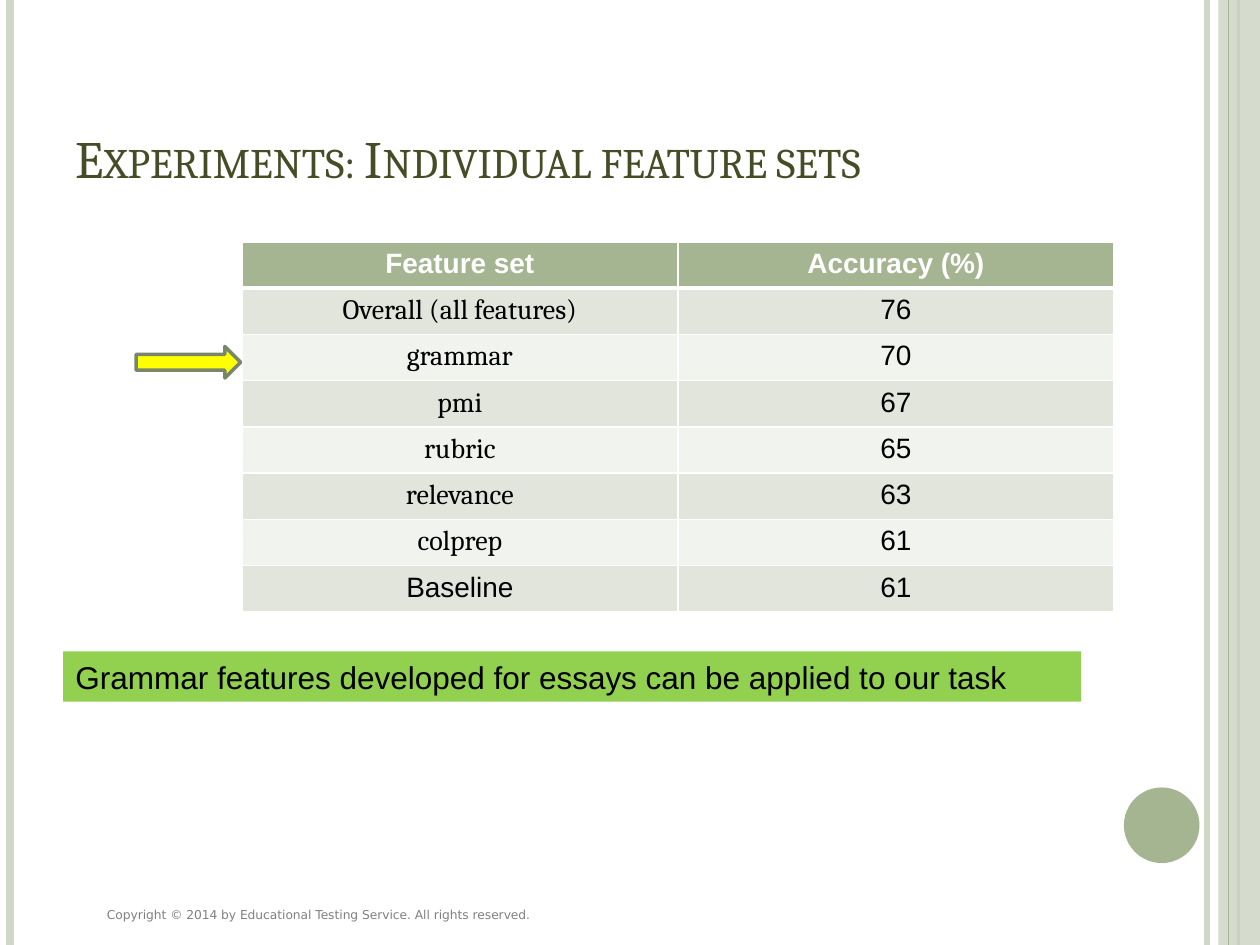
import pptx
import pptx.util
import pptx.dml.color
import pptx.enum.shapes
import pptx.enum.text
import pptx.oxml
import pptx.oxml.ns
from pptx.util import Inches

COLORS = {
    "sage": "A5B592", "pale": "CFD7C7", "title": "444D26", "gray": "808080",
    "band_dark": "E1E5DC", "band_light": "F0F3EE", "white": "FFFFFF",
    "black": "000000", "green": "92D050", "yellow": "FFFF00", "outline": "7A866C",
}
RGB = {k: pptx.dml.color.RGBColor.from_string(v) for k, v in COLORS.items()}
NS = pptx.oxml.ns.nsdecls("a")
SHAPE = pptx.enum.shapes.MSO_SHAPE
ALIGN = pptx.enum.text.PP_ALIGN
ANCHOR = pptx.enum.text.MSO_ANCHOR


def add_text(tf, text, size, font="Arial", color="black", bold=False,
             align=ALIGN.LEFT, anchor=ANCHOR.TOP, small_caps=False):
    tf.word_wrap = True
    tf.vertical_anchor = anchor
    p = tf.paragraphs[0]
    p.alignment = align
    r = p.add_run()
    r.text = text
    r.font.size = pptx.util.Pt(size)
    r.font.name = font
    r.font.bold = bold
    r.font.color.rgb = RGB[color]
    if small_caps:
        r.font._element.set("cap", "small")


def add_box(kind, x, y, w, h, fill, opacity=100):
    sp = s.shapes.add_shape(kind, Inches(x), Inches(y), Inches(w), Inches(h))
    sp.shadow.inherit = False
    sp.fill.solid()
    sp.fill.fore_color.rgb = RGB[fill]
    sp.line.fill.background()
    if opacity < 100:
        clr = sp._element.spPr.find(".//" + pptx.oxml.ns.qn("a:srgbClr"))
        clr.append(pptx.oxml.parse_xml(f'<a:alpha {NS} val="{opacity * 1000}"/>'))
    return sp


prs = pptx.Presentation()
prs.slide_width, prs.slide_height = Inches(10), Inches(7.5)
s = prs.slides.add_slide(prs.slide_layouts[6])

# Side band and vertical rules; the rule at 9.83 lies under the band
for x, color, width in [(9.58, "pale", 3), (0.08, "pale", 4.5),
                        (9.83, "sage", 1.5), (9.75, "sage", 0.75)]:
    if x == 9.75:
        add_box(SHAPE.RECTANGLE, 9.67, 0, 0.33, 7.5, "pale", opacity=87)
    rule = s.shapes.add_connector(pptx.enum.shapes.MSO_CONNECTOR.STRAIGHT,
                                  Inches(x), 0, Inches(x), Inches(7.5))
    rule.line.color.rgb = RGB[color]
    rule.line.width = pptx.util.Pt(width)
    rule._element.spPr.append(pptx.oxml.parse_xml(f"<a:effectLst {NS}/>"))

add_box(SHAPE.OVAL, 8.92, 6.25, 0.6, 0.6, "sage")

# Footer and title
footer = s.shapes.add_textbox(Inches(0.75), Inches(7.15), Inches(6.25), Inches(0.22))
add_text(footer.text_frame,
         "Copyright © 2014 by Educational Testing Service. All rights reserved.",
         7, font="DejaVu Sans", color="gray")
title = s.shapes.add_textbox(Inches(0.5), Inches(0.3), Inches(8.17), Inches(1.25))
add_text(title.text_frame, "Experiments: Individual feature sets", 30,
         font="Cambria", color="title", anchor=ANCHOR.BOTTOM, small_caps=True)

# Results table
rows = [
    ("Feature set", "Accuracy (%)"),
    ("Overall (all features)", "76"),
    ("grammar", "70"),
    ("pmi", "67"),
    ("rubric", "65"),
    ("relevance", "63"),
    ("colprep", "61"),
    ("Baseline", "61"),
]
table = s.shapes.add_table(len(rows), 2, Inches(1.92), Inches(1.92),
                           Inches(6.92), Inches(0.3 * len(rows))).table
for i, row in enumerate(rows):
    header = i == 0
    fill = "sage" if header else "band_dark" if i % 2 else "band_light"
    for j, text in enumerate(row):
        cell = table.cell(i, j)
        serif = j == 0 and 0 < i < len(rows) - 1
        add_text(cell.text_frame, text, 16, font="Cambria" if serif else "Arial",
                 color="white" if header else "black", bold=header,
                 align=ALIGN.CENTER)
        # Borders go before the fill in the cell properties
        tc_pr = cell._tc.get_or_add_tcPr()
        for side in ("L", "R", "T", "B"):
            thick = (header and side == "B") or (i == 1 and side == "T")
            tc_pr.append(pptx.oxml.parse_xml(
                f'<a:ln{side} {NS} w="{pptx.util.Pt(3 if thick else 1)}"><a:solidFill>'
                f'<a:srgbClr val="{COLORS["white"]}"/></a:solidFill></a:ln{side}>'))
        cell.fill.solid()
        cell.fill.fore_color.rgb = RGB[fill]

# Takeaway bar
bar = add_box(SHAPE.RECTANGLE, 0.5, 5.17, 8.08, 0.4, "green")
add_text(bar.text_frame,
         "Grammar features developed for essays can be applied to our task", 18)

# Arrow pointing at the grammar row
arrow = add_box(SHAPE.RIGHT_ARROW, 1.08, 2.75, 0.83, 0.25, "yellow")
arrow.line.color.rgb = RGB["outline"]
arrow.line.width = pptx.util.Pt(2)

prs.save("out.pptx")
